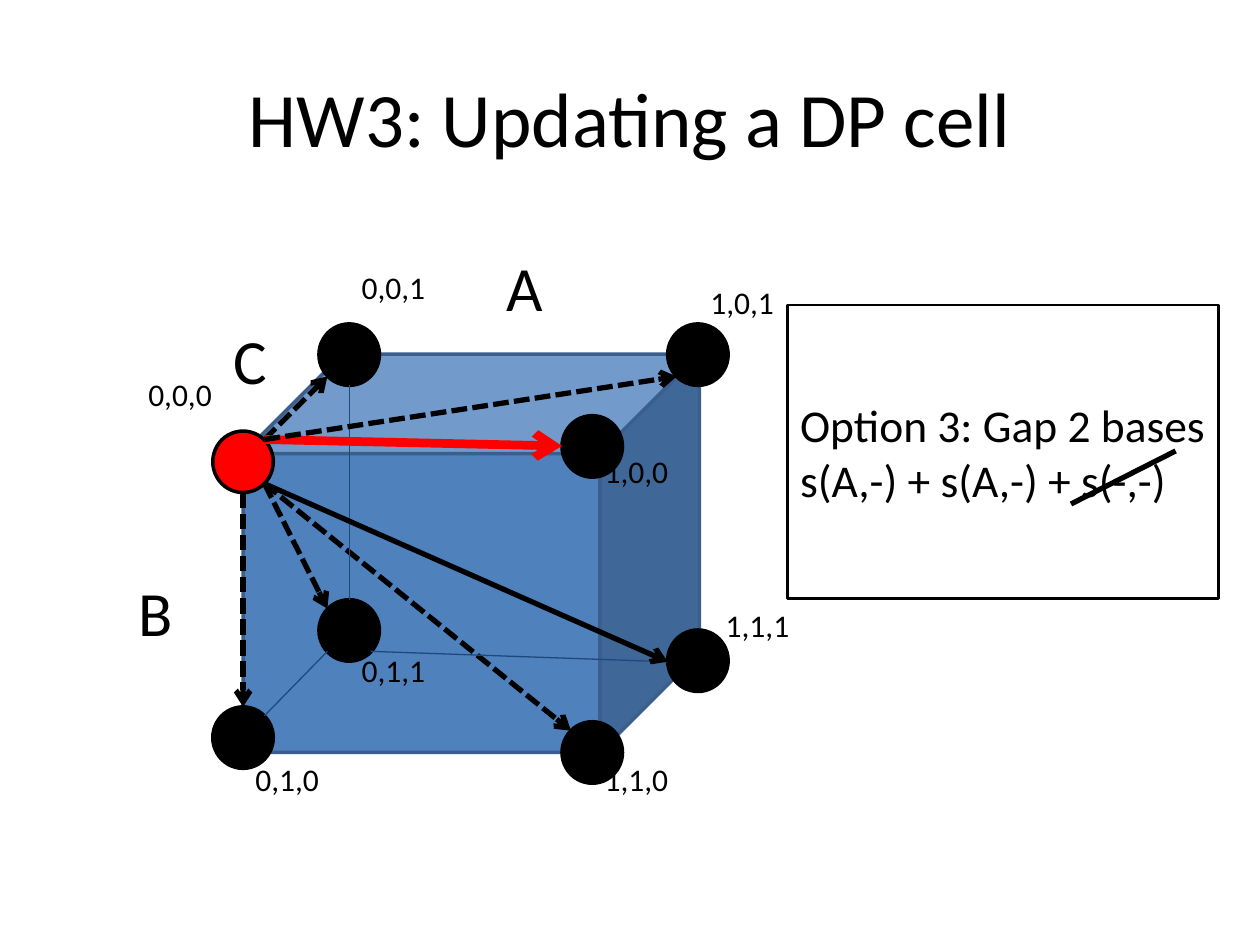
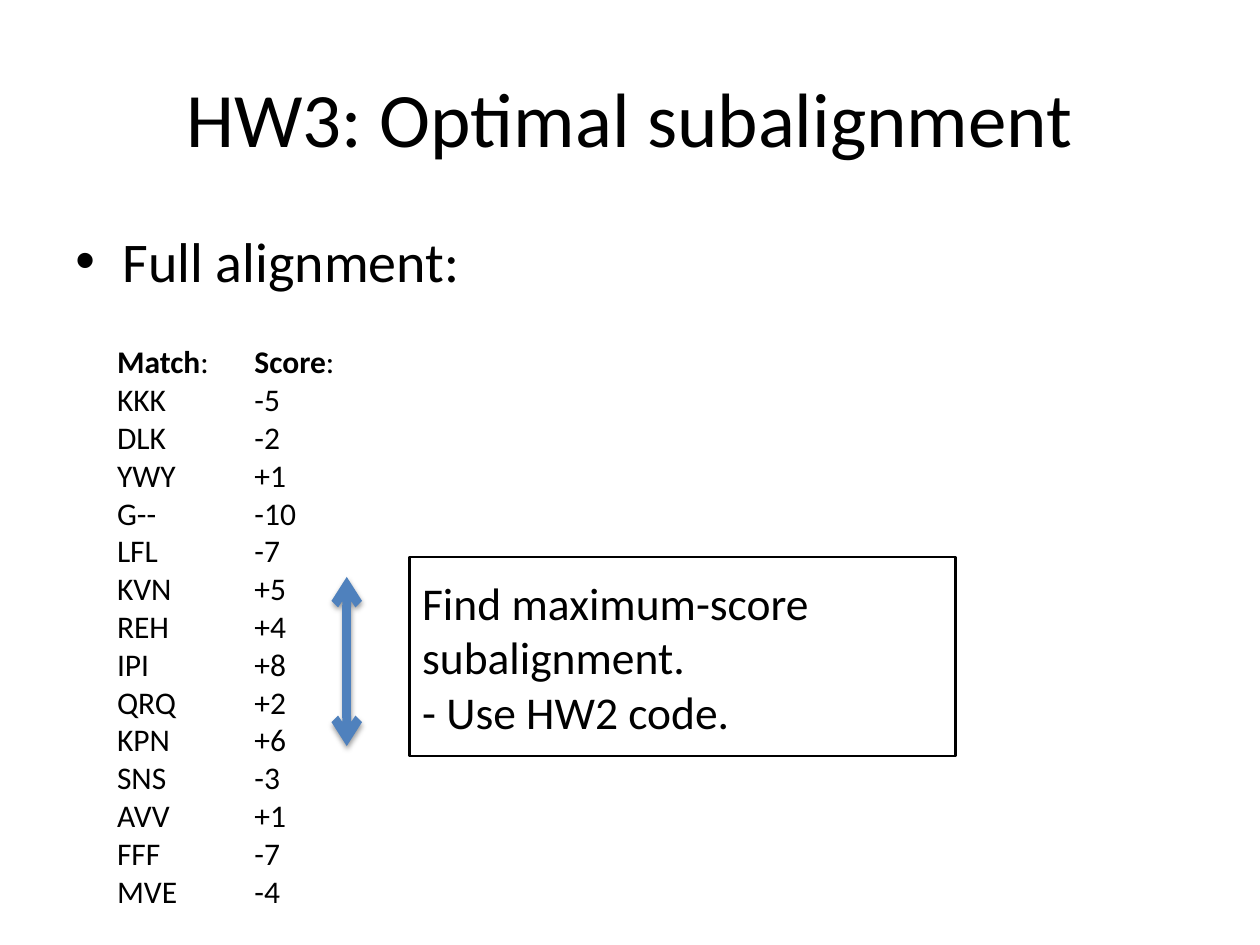
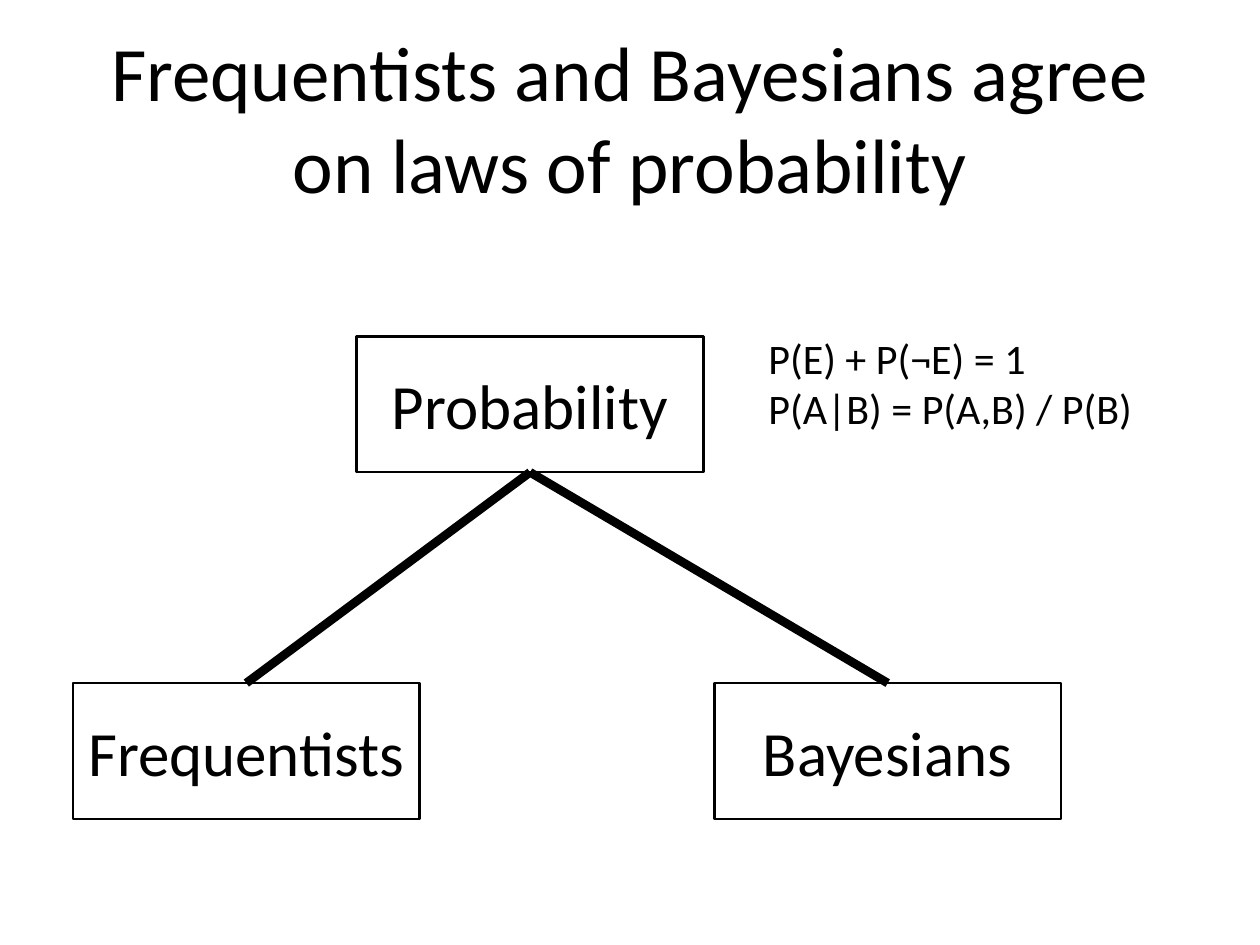
import dataclasses
import typing

import pptx
import pptx.dml.color
import pptx.enum.dml
import pptx.enum.shapes
import pptx.enum.text
import pptx.oxml
import pptx.oxml.ns
import pptx.util

Cm = pptx.util.Cm
Pt = pptx.util.Pt
Form = pptx.enum.shapes.MSO_SHAPE
Align = pptx.enum.text.PP_ALIGN
Anchor = pptx.enum.text.MSO_ANCHOR

FONT = "Calibri"
BLACK, WHITE, RED = "000000", "FFFFFF", "FF0000"
BLUE, NAVY, EDGE = "4F81BD", "1F497D", "3A5F8C"
BOTTOM, TOP = 2, 0  # connection sites


class Point(typing.NamedTuple):
    x: float
    y: float


class Box(typing.NamedTuple):
    left: float
    top: float
    width: float
    height: float


class Run(typing.NamedTuple):
    text: str
    bold: bool = False


Lines = list[list[Run]]


@dataclasses.dataclass
class Pen:
    hue: str = BLACK
    width: float = 3
    dashed: bool = False
    head: bool = False
    tail: bool = False
    shade: bool = False


@dataclasses.dataclass
class Node:
    name: str
    disc: Point
    label: Point
    hue: str = BLACK


@dataclasses.dataclass
class Link:
    start: Point
    end: Point
    pen: Pen


# Shared helpers

def tint(code: str) -> pptx.dml.color.RGBColor:
    return pptx.dml.color.RGBColor.from_string(code)


def cms(values: typing.Iterable[float]) -> list[pptx.util.Length]:
    return [Cm(value) for value in values]


def plain(*texts: str) -> Lines:
    return [[Run(text)] for text in texts]


def write(frame, lines: Lines, size: float, align=Align.LEFT, anchor=Anchor.TOP) -> None:
    frame.word_wrap = True
    frame.vertical_anchor = anchor
    for place, line in enumerate(lines):
        para = frame.add_paragraph() if place else frame.paragraphs[0]
        para.alignment = align
        for part in line:
            run = para.add_run()
            run.text = part.text
            run.font.name = FONT
            run.font.size = Pt(size)
            run.font.bold = part.bold
            run.font.color.rgb = tint(BLACK)


def add_text(shapes, box: Box, lines: Lines, size: float, **style):
    shape = shapes.add_textbox(*cms(box))
    write(shape.text_frame, lines, size, **style)
    return shape


def add_form(shapes, form, box: Box, fill: str, line: str = BLACK, width: float = 2):
    shape = shapes.add_shape(form, *cms(box))
    shape.shadow.inherit = False
    shape.fill.solid()
    shape.fill.fore_color.rgb = tint(fill)
    shape.line.color.rgb = tint(line)
    shape.line.width = Pt(width)
    return shape


def add_panel(shapes, box: Box, lines: Lines, size: float, align=Align.LEFT):
    shape = add_form(shapes, Form.RECTANGLE, box, WHITE, width=1.5)
    write(shape.text_frame, lines, size, align, Anchor.MIDDLE)
    return shape


def add_line(shapes, start: Point, end: Point, pen: Pen):
    kind = pptx.enum.shapes.MSO_CONNECTOR.STRAIGHT
    line = shapes.add_connector(kind, *cms(start + end))
    line.line.color.rgb = tint(pen.hue)
    line.line.width = Pt(pen.width)
    if pen.dashed:
        line.line.dash_style = pptx.enum.dml.MSO_LINE.SQUARE_DOT
    props = line._element.spPr
    stroke = props.find(pptx.oxml.ns.qn("a:ln"))
    space = pptx.oxml.ns.nsdecls("a")
    for shown, tag in ((pen.head, "headEnd"), (pen.tail, "tailEnd")):
        if shown:
            stroke.append(pptx.oxml.parse_xml(f'<a:{tag} {space} type="arrow"/>'))
    shade = (
        f'<a:outerShdw blurRad="{Pt(3.1)}" dist="{Pt(1.6)}" dir="5400000" rotWithShape="0">'
        f'<a:srgbClr val="{BLACK}"><a:alpha val="38000"/></a:srgbClr></a:outerShdw>'
        if pen.shade else ""
    )
    props.append(pptx.oxml.parse_xml(f"<a:effectLst {space}>{shade}</a:effectLst>"))
    return line


def add_slide(deck, title: str):
    shapes = deck.slides.add_slide(deck.slide_layouts[6]).shapes
    add_text(shapes, Box(1.27, 0.76, 22.86, 3.18), plain(title), 44,
             align=Align.CENTER, anchor=Anchor.MIDDLE)
    return shapes


# Slide 1: cube of alignment moves

NODES = [
    Node("0,0,0", Point(4.29, 8.69), Point(2.74, 7.44), RED),
    Node("0,0,1", Point(6.43, 6.53), Point(7.04, 5.28)),
    Node("1,0,1", Point(13.46, 6.53), Point(14.07, 5.59)),
    Node("1,0,0", Point(11.33, 8.38), Point(11.94, 8.99)),
    Node("0,1,0", Point(4.29, 14.25), Point(4.9, 15.19)),
    Node("1,1,0", Point(11.33, 14.55), Point(11.94, 15.19)),
    Node("1,1,1", Point(13.46, 12.7), Point(14.38, 12.09)),
    Node("0,1,1", Point(6.43, 12.09), Point(7.04, 13)),
]
UPPER, LOWER = Point(5.33, 8.86), Point(5.33, 9.75)  # where moves leave the red node
HIDDEN = Pen(NAVY, 0.75)
MOVE = Pen(dashed=True, tail=True)
LINKS = [
    Link(Point(7.04, 7.77), Point(7.04, 12.09), HIDDEN),
    Link(Point(13.46, 13.34), Point(7.47, 13.13), HIDDEN),
    Link(Point(5.33, 14.43), Point(6.6, 13.13), HIDDEN),
    Link(UPPER, Point(6.6, 7.59), MOVE),
    Link(UPPER, Point(11.33, 8.99), Pen(RED, 5, tail=True)),
    Link(Point(4.9, 9.93), Point(4.9, 14.25), MOVE),
    Link(LOWER, Point(6.6, 12.27), MOVE),
    Link(LOWER, Point(13.46, 13.34), Pen(tail=True)),
    Link(UPPER, Point(13.64, 7.59), MOVE),
]
AXES = {
    "A": Box(9.96, 4.88, 1.07, 1.8),
    "B": Box(2.54, 11.43, 2.74, 1.8),
    "C": Box(4.45, 6.35, 2.74, 1.8),
}


def draw_cube(deck) -> None:
    shapes = add_slide(deck, "HW3: Updating a DP cell")
    group = shapes.add_group_shape().shapes
    add_form(group, Form.CUBE, Box(4.9, 7.14, 9.2, 8.03), BLUE, EDGE)
    add_line(group, LOWER, Point(11.51, 14.73), MOVE)
    for node in NODES:
        add_form(group, Form.OVAL, Box(*node.disc, 1.22, 1.24), node.hue)
    for link in LINKS:
        add_line(group, link.start, link.end, link.pen)
    for node in NODES:
        add_text(group, Box(*node.label, 2.77, 1.55), plain(node.name), 18)
    for name, box in AXES.items():
        add_text(shapes, box, plain(name), 36)
    add_panel(shapes, Box(15.88, 6.15, 8.69, 5.92),
              plain("Option 3: Gap 2 bases", "s(A,-) + s(A,-) + s(-,-)"), 26)
    add_line(shapes, Point(23.7, 9.09), Point(21.59, 10.16), Pen())


# Slide 2: match and score columns

COLUMNS = {
    "Match": "KKK DLK YWY G-- LFL KVN REH IPI QRQ KPN SNS AVV FFF MVE",
    "Score": "-5 -2 +1 -10 -7 +5 +4 +8 +2 +6 -3 +1 -7 -4",
}


def add_bullet(para) -> None:
    para.space_before = Pt(6.4)
    props = para._p.get_or_add_pPr()
    props.set("marL", str(Cm(0.95)))
    props.set("indent", str(-Cm(0.95)))
    space = pptx.oxml.ns.nsdecls("a")
    props.append(pptx.oxml.parse_xml(f'<a:buFont {space} typeface="Arial"/>'))
    props.append(pptx.oxml.parse_xml(f'<a:buChar {space} char="•"/>'))


def draw_scores(deck) -> None:
    shapes = add_slide(deck, "HW3: Optimal subalignment")
    body = add_text(shapes, Box(1.27, 4.45, 22.86, 12.57), plain("Full alignment:"), 32)
    add_bullet(body.text_frame.paragraphs[0])
    for place, (head, cells) in enumerate(COLUMNS.items()):
        lines = [[Run(head, True), Run(":")]] + plain(*cells.split())
        add_text(shapes, Box(2.11 + 2.77 * place, 6.78, 3.38, 11.79), lines, 18)
    add_line(shapes, Point(6.99, 11.63), Point(6.99, 15.04),
             Pen(BLUE, 5, head=True, tail=True, shade=True))
    add_panel(shapes, Box(8.26, 11.23, 11, 4.01),
              plain("Find maximum-score subalignment.", "- Use HW2 code."), 26)


# Slide 3: tree of schools

SCHOOLS = {"Frequentists": Point(1.47, 13.77), "Bayesians": Point(14.4, 13.77)}


def draw_tree(deck) -> None:
    shapes = add_slide(deck, "Frequentists and Bayesians agree on laws of probability")

    def add_school(name: str, spot: Point):
        return add_panel(shapes, Box(*spot, 6.99, 2.74), plain(name), 36, Align.CENTER)

    leaves = [add_school(name, spot) for name, spot in SCHOOLS.items()]
    root = add_school("Probability", Point(7.19, 6.78))
    for leaf in leaves:
        branch = add_line(shapes, Point(0, 0), Point(1, 1), Pen(width=5))
        branch.begin_connect(root, BOTTOM)
        branch.end_connect(leaf, TOP)
    add_text(shapes, Box(15.24, 6.58, 8.05, 2.31),
             plain("P(E) + P(¬E) = 1", "P(A|B) = P(A,B) / P(B)"), 24)


def main() -> None:
    deck = pptx.Presentation()
    deck.slide_width, deck.slide_height = Cm(25.4), Cm(19.05)
    for draw in (draw_cube, draw_scores, draw_tree):
        draw(deck)
    deck.save("out.pptx")


if __name__ == "__main__":
    main()
